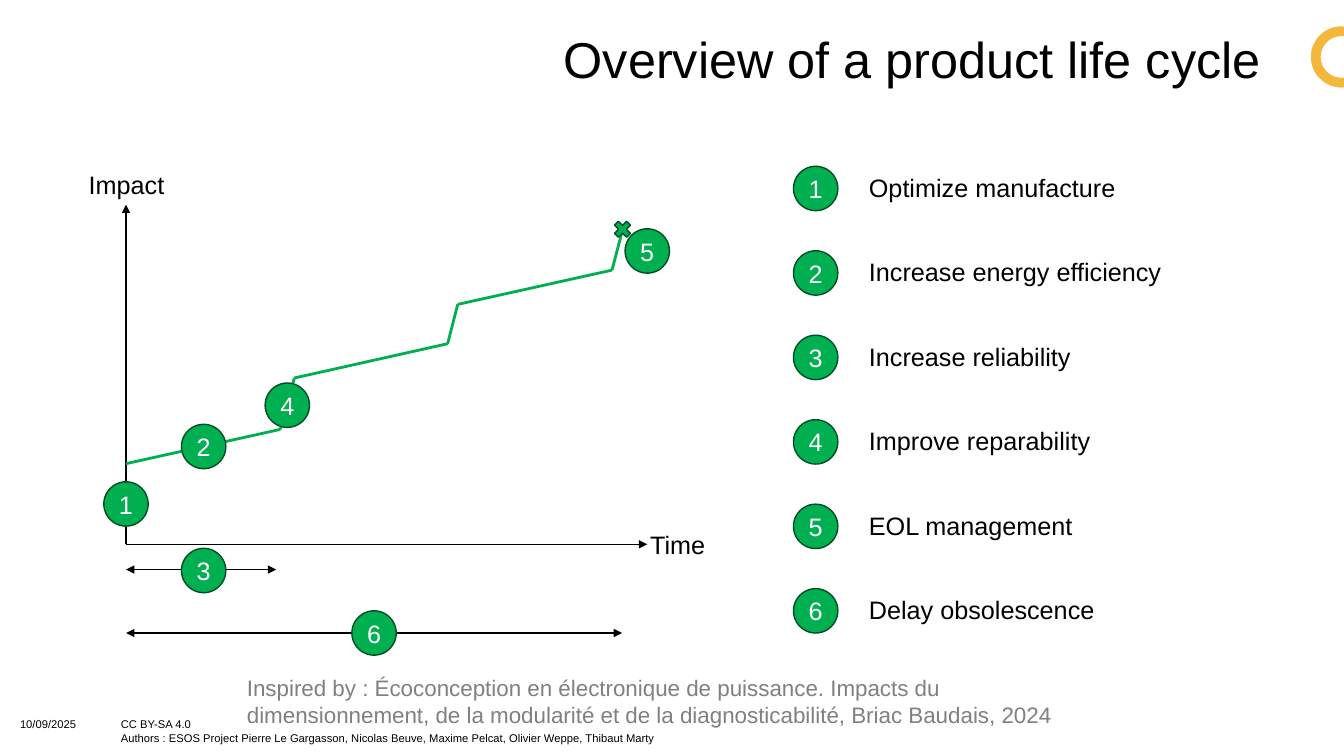
import pptx
import pptx.util
import pptx.dml.color
import pptx.enum.shapes
import pptx.enum.text
import pptx.oxml
import pptx.oxml.ns
from lxml import etree

Inches = pptx.util.Inches
Pt = pptx.util.Pt
RGBColor = pptx.dml.color.RGBColor
Shape = pptx.enum.shapes.MSO_SHAPE
Align = pptx.enum.text.PP_ALIGN
Anchor = pptx.enum.text.MSO_ANCHOR
qn = pptx.oxml.ns.qn

BLACK = RGBColor(0x00, 0x00, 0x00)
WHITE = RGBColor(0xFF, 0xFF, 0xFF)
GREEN = RGBColor(0x00, 0xB0, 0x50)
DARK_GREEN = RGBColor(0x00, 0x4D, 0x23)
GRAY = RGBColor(0x80, 0x80, 0x80)
GOLD = RGBColor(0xF3, 0xB7, 0x3B)


def add_run(paragraph, text, size, color, align=Align.LEFT):
    paragraph.alignment = align
    run = paragraph.add_run()
    run.text = text
    run.font.name = "Arial"
    run.font.size = Pt(size)
    run.font.color.rgb = color


def add_line(start, end, color, width, arrows=()):
    line = slide.shapes.add_connector(
        pptx.enum.shapes.MSO_CONNECTOR.STRAIGHT,
        Inches(start[0]), Inches(start[1]), Inches(end[0]), Inches(end[1]))
    line.line.color.rgb = color
    line.line.width = Pt(width)
    for arrow in arrows:
        etree.SubElement(line.line._get_or_add_ln(), qn(f"a:{arrow}"), type="triangle")
    etree.SubElement(line._element.spPr, qn("a:effectLst"))


presentation = pptx.Presentation()
presentation.slide_width = Inches(13.33)
presentation.slide_height = Inches(7.5)
slide = presentation.slides.add_slide(presentation.slide_layouts[5])

title = slide.shapes.title
title.left, title.top = Inches(0.73), Inches(0.21)
title.width, title.height = Inches(11.88), Inches(0.82)
title.text_frame.vertical_anchor = Anchor.MIDDLE
title_paragraph = title.text_frame.paragraphs[0]
title_paragraph.line_spacing = 0.9
add_run(title_paragraph, "Overview of a product life cycle", 36, BLACK, Align.RIGHT)

ring = slide.shapes.add_shape(Shape.OVAL, Inches(13.05), Inches(0.31), Inches(0.51), Inches(0.51))
ring.shadow.inherit = False
ring.fill.background()
ring.line.color.rgb = GOLD
ring.line.width = Pt(7)

footer = slide.shapes.add_textbox(Inches(0.1), Inches(7.07), Inches(6.72), Inches(0.37))
footer.text_frame.word_wrap = True
footer_lines = [
    "10/09/2025\tCC BY-SA 4.0",
    "\tAuthors : ESOS Project Pierre Le Gargasson, Nicolas Beuve, Maxime Pelcat, "
    "Olivier Weppe, Thibaut Marty",
]
footer.text_frame.add_paragraph()
for paragraph, text in zip(footer.text_frame.paragraphs, footer_lines):
    tabs = etree.SubElement(paragraph._p.get_or_add_pPr(), qn("a:tabLst"))
    etree.SubElement(tabs, qn("a:tab"), pos=str(Inches(1)), algn="l")
    add_run(paragraph, text, 8, BLACK)

origin = (1.25, 5.4)
add_line(origin, (1.25, 2.03), BLACK, 1, ["tailEnd"])
add_line(origin, (6.42, 5.4), BLACK, 1, ["tailEnd"])
for right, top in [(2.74, 5.65), (6.17, 6.28)]:
    add_line((1.25, top), (right, top), BLACK, 1, ["headEnd", "tailEnd"])

impact_points = [(1.25, 4.6), (2.78, 4.26), (2.92, 3.75), (4.44, 3.41),
                 (4.54, 3.02), (6.07, 2.68), (6.17, 2.3)]
for start, end in zip(impact_points, impact_points[1:]):
    add_line(start, end, GREEN, 2)

actions = ["Optimize manufacture", "Increase energy efficiency", "Increase reliability",
           "Improve reparability", "EOL management", "Delay obsolescence"]
badges = [(1, 1.03, 4.78), (2, 1.8, 4.21), (3, 1.8, 5.44),
          (4, 2.63, 3.8), (5, 6.2, 2.27), (6, 3.49, 6.06)]
labels = [
    ("Impact", 0.73, 1.63, 1.05, 0.4, 18, BLACK, Align.CENTER),
    ("Time", 6.35, 5.2, 0.86, 0.4, 18, BLACK, Align.LEFT),
    ("Inspired by : Écoconception en électronique de puissance. Impacts du dimensionnement, "
     "de la modularité et de la diagnosticabilité, Briac Baudais, 2024",
     2.35, 6.64, 8.58, 0.64, 16, GRAY, Align.LEFT),
]
for index, action in enumerate(actions):
    top = 1.65 + 0.838 * index
    badges.append((index + 1, 7.87, top))
    labels.append((action, 8.52, top + 0.01, 3.67, 0.4, 18, BLACK, Align.LEFT))

for text, left, top, width, height, size, color, align in labels:
    label = slide.shapes.add_textbox(Inches(left), Inches(top), Inches(width), Inches(height))
    label.text_frame.word_wrap = True
    add_run(label.text_frame.paragraphs[0], text, size, color, align)

markers = [(Shape.OVAL, str(number), left, top, 0.44) for number, left, top in badges]
markers.append((Shape.MATH_MULTIPLY, "", 6.06, 2.16, 0.23))
for kind, text, left, top, side in markers:
    marker = slide.shapes.add_shape(kind, Inches(left), Inches(top), Inches(side), Inches(side))
    marker.shadow.inherit = False
    marker.fill.solid()
    marker.fill.fore_color.rgb = GREEN
    marker.line.color.rgb = DARK_GREEN
    marker.line.width = Pt(1)
    if text:
        frame = marker.text_frame
        frame.margin_left = frame.margin_right = frame.margin_top = frame.margin_bottom = 0
        frame.vertical_anchor = Anchor.MIDDLE
        add_run(frame.paragraphs[0], text, 18, WHITE, Align.CENTER)

presentation.save("out.pptx")
